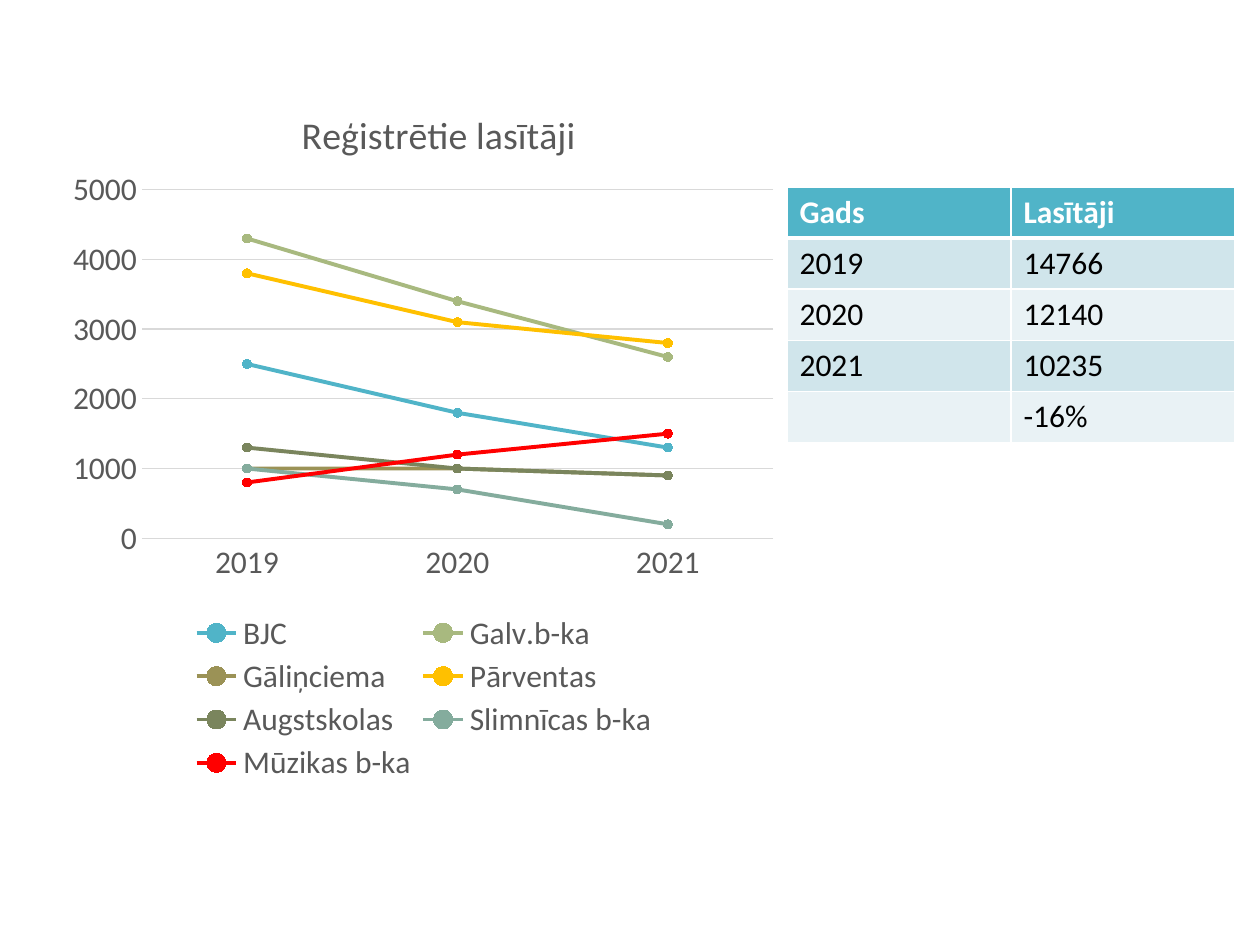
from lxml.etree import SubElement
from pptx import Presentation
from pptx.chart.data import CategoryChartData
from pptx.dml.color import RGBColor
from pptx.enum.chart import XL_CHART_TYPE, XL_LEGEND_POSITION, XL_MARKER_STYLE, XL_TICK_MARK
from pptx.oxml import parse_xml
from pptx.oxml.ns import nsdecls, qn
from pptx.util import Pt

PX = 914400 // 126
FONT, GREY, GRID = "Calibri", "595959", "D9D9D9"

TITLE = "Reģistrētie lasītāji"
YEARS = ["2019", "2020", "2021"]
SERIES = [
    ("BJC", "50B4C8", (2500, 1800, 1300)),
    ("Galv.b-ka", "A8B97F", (4300, 3400, 2600)),
    ("Gāliņciema", "9B9256", (1000, 1000, 900)),
    ("Pārventas", "FFC000", (3800, 3100, 2800)),
    ("Augstskolas", "7A855D", (1300, 1000, 900)),
    ("Slimnīcas b-ka", "84AC9D", (1000, 700, 200)),
    ("Mūzikas b-ka", "FF0000", (800, 1200, 1500)),
]
ROWS = [
    ("Gads", "Lasītāji"),
    ("2019", "14766"),
    ("2020", "12140"),
    ("2021", "10235"),
    ("", "-16%"),
]
HEADER_FILL, BAND_FILLS = "50B4C8", ("E9F2F5", "D0E5EB")

CHART_BOX = (58, 65, 729, 725)
PLOT_BOX = (142, 190, 631, 349)
LEGEND_BOX = (184, 609, 480, 178)
TITLE_POS = (295, 101)
TABLE_POS, COL_W, ROW_H = (787, 187), 224, 51


def px(*values):
    return [v * PX for v in values]


def rgb(value):
    return RGBColor.from_string(value)


def style_font(font, color, size=18, bold=False):
    font.name, font.size, font.bold = FONT, Pt(size), bold
    font.color.rgb = rgb(color)


def style_line(line, color, width):
    line.color.rgb = rgb(color)
    line.width = Pt(width)


def place(parent, box, after=None, inner=False):
    """Give a chart part a manual layout, as fractions of the chart box."""
    for old in parent.findall(qn("c:layout")):
        parent.remove(old)
    layout = parse_xml(f"<c:layout {nsdecls('c')}/>")
    manual = SubElement(layout, qn("c:manualLayout"))
    left, top, width, height = CHART_BOX
    offset = (box[0] - left, box[1] - top, *box[2:])
    fractions = [round(v / full, 3) for v, full in zip(offset, (width, height, width, height))]
    items = [("layoutTarget", "inner")] if inner else []
    items += [("xMode", "edge"), ("yMode", "edge"), *zip("xywh", fractions)]
    for tag, val in items:
        SubElement(manual, qn(f"c:{tag}")).set("val", str(val))
    if after:
        parent.find(qn(after)).addnext(layout)
    else:
        parent.insert(0, layout)


def add_readers_chart(s):
    data = CategoryChartData(number_format="General")
    data.categories = YEARS
    for name, _, values in SERIES:
        data.add_series(name, values)
    chart = s.shapes.add_chart(XL_CHART_TYPE.LINE_MARKERS, *px(*CHART_BOX), data).chart
    style_font(chart.font, GREY)

    chart.has_title = True
    r = chart.chart_title.text_frame.paragraphs[0].add_run()
    r.text = TITLE
    style_font(r.font, GREY, 21.6)
    chart.chart_title.include_in_layout = False

    chart.has_legend = True
    legend = chart.legend
    legend.position = XL_LEGEND_POSITION.BOTTOM
    legend.include_in_layout = False
    style_font(legend.font, GREY)

    for axis in (chart.category_axis, chart.value_axis):
        axis.major_tick_mark = axis.minor_tick_mark = XL_TICK_MARK.NONE
        style_font(axis.tick_labels.font, GREY)
    style_line(chart.category_axis.format.line, GRID, 0.75)
    value_axis = chart.value_axis
    value_axis.minimum_scale, value_axis.maximum_scale, value_axis.major_unit = 0, 5000, 1000
    value_axis.format.line.fill.background()
    style_line(value_axis.major_gridlines.format.line, GRID, 0.75)

    plot = chart.plots[0]
    plot.vary_by_categories = False
    for series, (_, color, _) in zip(plot.series, SERIES):
        series.smooth = False
        style_line(series.format.line, color, 2.25)
        marker = series.marker
        marker.style, marker.size = XL_MARKER_STYLE.CIRCLE, 5
        marker.format.fill.solid()
        marker.format.fill.fore_color.rgb = rgb(color)
        style_line(marker.format.line, color, 0.75)

    root = chart.element
    place(root.find(".//" + qn("c:plotArea")), PLOT_BOX, inner=True)
    place(root.find(".//" + qn("c:legend")), LEGEND_BOX, after="c:legendPos")
    place(root.find(qn("c:chart")).find(qn("c:title")), TITLE_POS, after="c:tx")


def set_borders(cell, top, bottom):
    tc_pr = cell._tc.get_or_add_tcPr()
    for i, (side, width) in enumerate((("L", 1), ("R", 1), ("T", top), ("B", bottom))):
        tc_pr.insert(i, parse_xml(
            f'<a:ln{side} {nsdecls("a")} w="{Pt(width)}"><a:solidFill>'
            f'<a:srgbClr val="FFFFFF"/></a:solidFill></a:ln{side}>'))


def add_readers_table(s):
    n_rows, n_cols = len(ROWS), len(ROWS[0])
    size = (COL_W * n_cols, ROW_H * n_rows)
    table = s.shapes.add_table(n_rows, n_cols, *px(*TABLE_POS, *size)).table
    for i, row in enumerate(ROWS):
        for j, text in enumerate(row):
            cell = table.cell(i, j)
            cell.fill.solid()
            cell.fill.fore_color.rgb = rgb(BAND_FILLS[i % 2] if i else HEADER_FILL)
            set_borders(cell, 3 if i == 1 else 1, 3 if i == 0 else 1)
            if text:
                r = cell.text_frame.paragraphs[0].add_run()
                r.text = text
                style_font(r.font, "000000" if i else "FFFFFF", bold=i == 0)


def main():
    prs = Presentation()
    prs.slide_width, prs.slide_height = px(1260, 945)
    s = prs.slides.add_slide(prs.slide_layouts[6])
    add_readers_table(s)
    add_readers_chart(s)
    prs.save("out.pptx")


if __name__ == "__main__":
    main()
